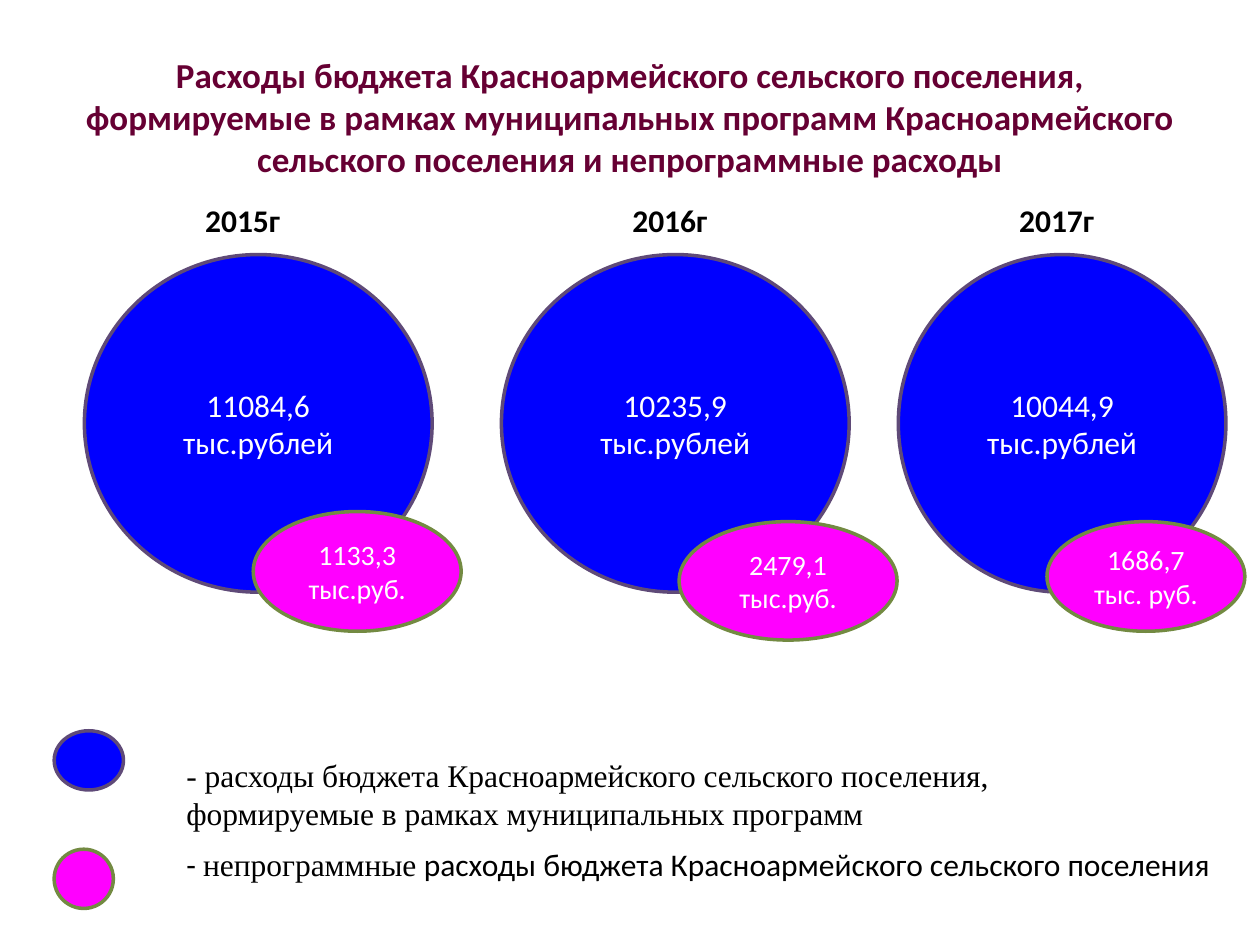
"""Build a slide comparing programme and non-programme budget spending by year."""
from pptx import Presentation
from pptx.dml.color import RGBColor
from pptx.enum.shapes import MSO_SHAPE
from pptx.enum.text import MSO_ANCHOR, PP_ALIGN
from pptx.util import Inches, Pt

OVAL = MSO_SHAPE.OVAL
MIDDLE = MSO_ANCHOR.MIDDLE
CENTER, LEFT = PP_ALIGN.CENTER, PP_ALIGN.LEFT
SANS, SERIF = "Calibri", "Times New Roman"
COLORS = {
    "title": "660033", "text": "000000", "white": "FFFFFF",
    "program": "0000FF", "program_line": "5F4A78",
    "other": "FF00FF", "other_line": "738A42",
}


def add_text(shape, runs, size, color, bold=False, align=LEFT):
    tf = shape.text_frame
    tf.word_wrap = True
    p = tf.paragraphs[0]
    p.alignment = align
    for text, font in runs:
        r = p.add_run()
        r.text = text
        r.font.name = font
        r.font.size = Pt(size)
        r.font.bold = bold
        r.font.color.rgb = RGBColor.from_string(COLORS[color])


def add_oval(s, kind, box, text="", size=18):
    sp = s.shapes.add_shape(OVAL, *map(Inches, box))
    sp.shadow.inherit = False
    sp.fill.solid()
    sp.fill.fore_color.rgb = RGBColor.from_string(COLORS[kind])
    sp.line.color.rgb = RGBColor.from_string(COLORS[kind + "_line"])
    sp.line.width = Pt(2)
    if text:
        sp.text_frame.vertical_anchor = MIDDLE
        add_text(sp, [(text, SANS)], size, "white", align=CENTER)


prs = Presentation()
prs.slide_width, prs.slide_height = Inches(10), Inches(7.5)
s = prs.slides.add_slide(prs.slide_layouts[5])

title = s.shapes.title
title.left, title.top = Inches(0.5), Inches(0.3)
title.width, title.height = Inches(9), Inches(1.25)
title.text_frame.vertical_anchor = MIDDLE
add_text(title, [("Расходы бюджета Красноармейского сельского поселения, "
                  "формируемые в рамках муниципальных программ Красноармейского "
                  "сельского поселения и непрограммные расходы", SANS)],
         20, "title", bold=True, align=CENTER)

programs = [
    (0.67, 2.76, "11084,6 тыс.рублей"),
    (3.98, 2.76, "10235,9 тыс.рублей"),
    (7.13, 2.6, "10044,9 тыс.рублей"),
]
for left, width, text in programs:
    add_oval(s, "program", (left, 2.02, width, 2.68), text)

others = [
    ((2.01, 4.06, 1.65, 0.95), "1133,3 тыс.руб."),
    ((5.39, 4.14, 1.73, 0.94), "2479,1 тыс.руб."),
    ((8.31, 4.14, 1.57, 0.87), "1686,7 тыс. руб."),
]
for box, text in others:
    add_oval(s, "other", box, text, 16)

add_oval(s, "program", (0.43, 5.8, 0.55, 0.47))
add_oval(s, "other", (0.43, 6.74, 0.47, 0.47))

for left, year in [(1.53, "2015г"), (4.92, "2016г"), (7.99, "2017г")]:
    tb = s.shapes.add_textbox(Inches(left), Inches(1.55), Inches(0.92), Inches(0.4))
    add_text(tb, [(year, SANS)], 18, "text", bold=True)

legend = [
    ((1.38, 6.66, 8.51, 0.4),
     [("- ", SANS), ("непрограммные", SERIF),
      (" расходы бюджета Красноармейского сельского поселения", SANS)]),
    ((1.38, 5.95, 7.95, 0.71),
     [("- расходы бюджета Красноармейского сельского поселения, "
       "формируемые в рамках муниципальных программ", SERIF)]),
]
for box, runs in legend:
    tb = s.shapes.add_textbox(*map(Inches, box))
    add_text(tb, runs, 18, "text")

prs.save("out.pptx")
